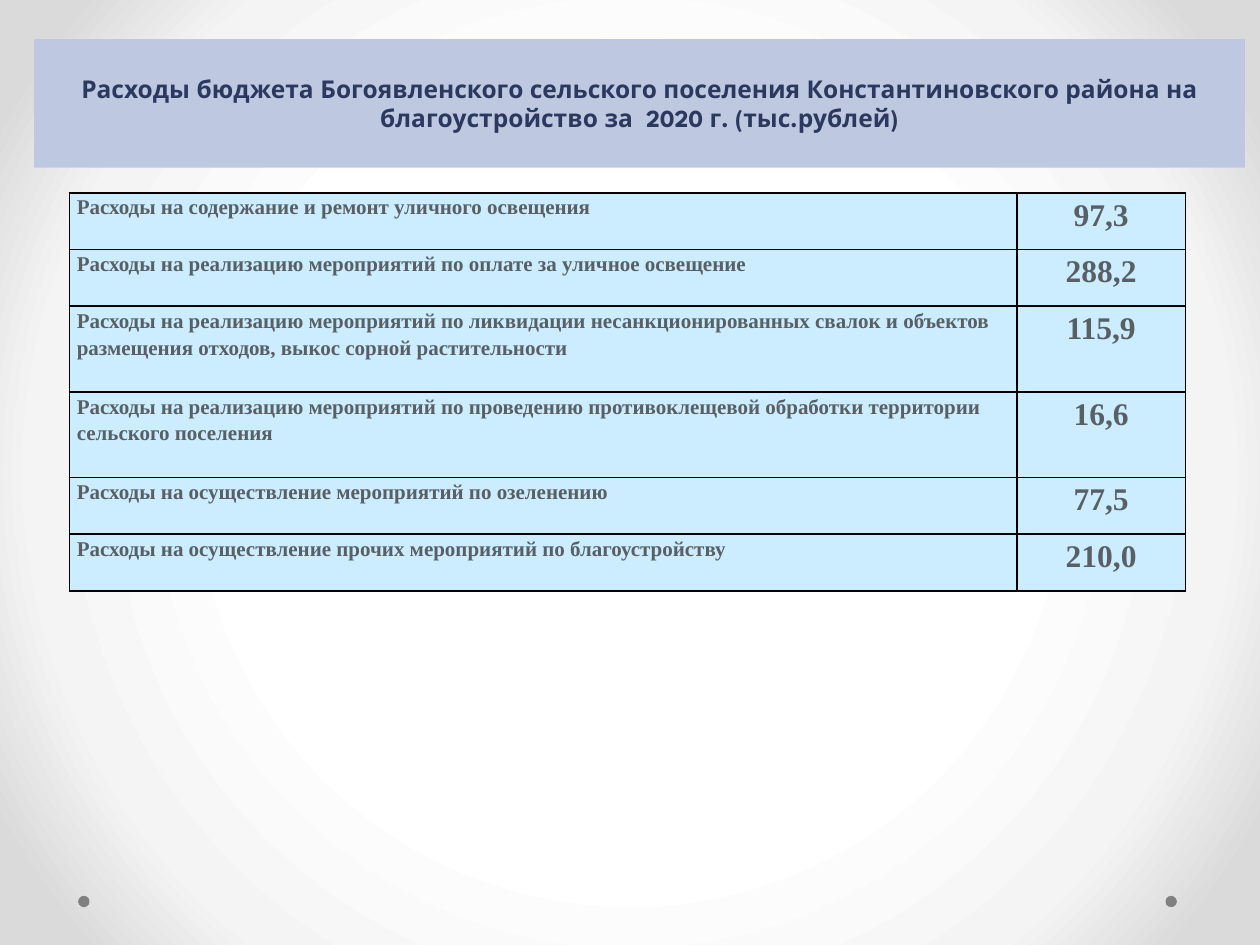
"""Build the slide of village improvement spending for 2020."""
from pptx import Presentation
from pptx.dml.color import RGBColor
from pptx.enum import shapes, text
from pptx.oxml import parse_xml
from pptx.oxml.ns import nsdecls
from pptx.util import Inches, Pt

NAVY = RGBColor(0x2C, 0x39, 0x5E)
LAVENDER = RGBColor(0xBF, 0xC8, 0xE1)
SLATE = RGBColor(0x58, 0x60, 0x64)
SKY = RGBColor(0xCC, 0xEC, 0xFF)
GREY = RGBColor(0x80, 0x80, 0x80)
BLACK = RGBColor(0, 0, 0)
BACKDROP = ((50, "FFFFFF"), (76, "F4F4F4"), (92, "DADADA"))

HEADING = ("Расходы бюджета Богоявленского сельского поселения Константиновского "
           "района на благоустройство за  2020 г. (тыс.рублей)")
EXPENSES = (
    ("Расходы на содержание и ремонт уличного освещения", "97,3", 0.45),
    ("Расходы на реализацию мероприятий по оплате за уличное освещение", "288,2", 0.45),
    ("Расходы на реализацию мероприятий по ликвидации несанкционированных свалок "
     "и объектов размещения отходов, выкос сорной растительности", "115,9", 0.68),
    ("Расходы на реализацию мероприятий по проведению противоклещевой обработки "
     "территории сельского поселения", "16,6", 0.68),
    ("Расходы на осуществление мероприятий по озеленению", "77,5", 0.45),
    ("Расходы на осуществление прочих мероприятий по благоустройству", "210,0", 0.45),
)


def set_backdrop(slide):
    """Fill the slide background with a circular gradient."""
    stops = "".join(f'<a:gs pos="{pos * 1000}"><a:srgbClr val="{color}"/></a:gs>'
                    for pos, color in BACKDROP)
    background = parse_xml(
        f'<p:bg {nsdecls("p", "a")}><p:bgPr><a:gradFill rotWithShape="1">'
        f'<a:gsLst>{stops}</a:gsLst><a:path path="circle">'
        '<a:fillToRect l="50000" t="50000" r="50000" b="50000"/></a:path>'
        '</a:gradFill><a:effectLst/></p:bgPr></p:bg>')
    slide.element.cSld.insert(0, background)


def write(paragraph, wording, font_name, size, color, align):
    """Add one bold run to an aligned paragraph."""
    paragraph.alignment = align
    run = paragraph.add_run()
    run.text = wording
    run.font.name, run.font.size, run.font.bold = font_name, Pt(size), True
    run.font.color.rgb = color


def add_heading(slide):
    """Place and format the title band."""
    heading = slide.shapes.title
    heading.left, heading.top = Inches(0.27), Inches(0.31)
    heading.width, heading.height = Inches(9.61), Inches(1.02)
    heading.fill.solid()
    heading.fill.fore_color.rgb = LAVENDER
    frame = heading.text_frame
    frame.word_wrap = True
    frame.auto_size = text.MSO_AUTO_SIZE.NONE
    frame.vertical_anchor = text.MSO_ANCHOR.MIDDLE
    write(frame.paragraphs[0], HEADING, "League Spartan", 14, NAVY, text.PP_ALIGN.CENTER)


def add_dot(slide, left):
    """Add a small grey dot at the foot of the slide."""
    dot = slide.shapes.add_shape(shapes.MSO_SHAPE.OVAL, Inches(left), Inches(7.11),
                                 Inches(0.09), Inches(0.09))
    dot.shadow.inherit = False
    dot.fill.solid()
    dot.fill.fore_color.rgb = GREY
    dot.line.fill.background()


def format_cell(cell, wording, size, align):
    """Write a table cell with its fill, margins and borders."""
    cell.margin_left = cell.margin_right = Inches(0.06)
    cell.margin_top = cell.margin_bottom = 0
    paragraph = cell.text_frame.paragraphs[0]
    paragraph.line_spacing = 1.15
    write(paragraph, wording, "Times New Roman", size, SLATE, align)
    properties = cell._tc.get_or_add_tcPr()
    for side in ("lnL", "lnR", "lnT", "lnB"):
        properties.append(parse_xml(
            f'<a:{side} {nsdecls("a")} w="{Pt(1)}"><a:solidFill>'
            f'<a:srgbClr val="{BLACK}"/></a:solidFill></a:{side}>'))
    cell.fill.solid()
    cell.fill.fore_color.rgb = SKY


def add_expenses(slide):
    """Add the table of expenses and amounts."""
    total_height = sum(height for _, _, height in EXPENSES)
    table = slide.shapes.add_table(len(EXPENSES), 2, Inches(0.55), Inches(1.53),
                                   Inches(8.86), Inches(total_height)).table
    table.first_row = table.horz_banding = False
    table.columns[0].width, table.columns[1].width = Inches(7.52), Inches(1.34)
    for row, (expense, amount, height) in zip(table.rows, EXPENSES):
        row.height = Inches(height)
        format_cell(row.cells[0], expense, 12, text.PP_ALIGN.LEFT)
        format_cell(row.cells[1], amount, 18, text.PP_ALIGN.CENTER)


def main():
    """Build and save the presentation."""
    deck = Presentation()
    deck.slide_width, deck.slide_height = Inches(10), Inches(7.5)
    slide = deck.slides.add_slide(deck.slide_layouts[5])
    set_backdrop(slide)
    for left in (9.25, 0.62):
        add_dot(slide, left)
    add_heading(slide)
    add_expenses(slide)
    deck.save("out.pptx")


if __name__ == "__main__":
    main()
